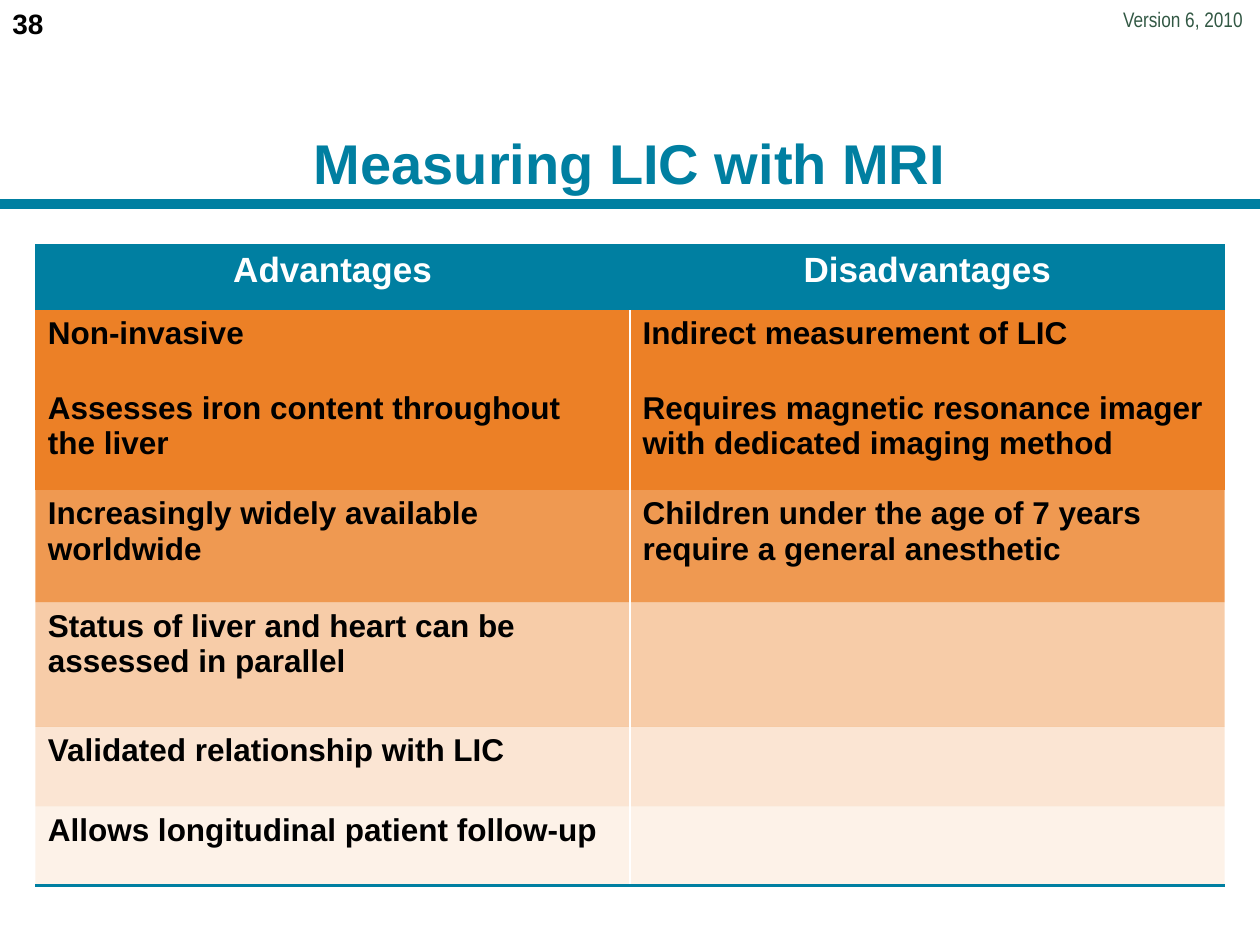
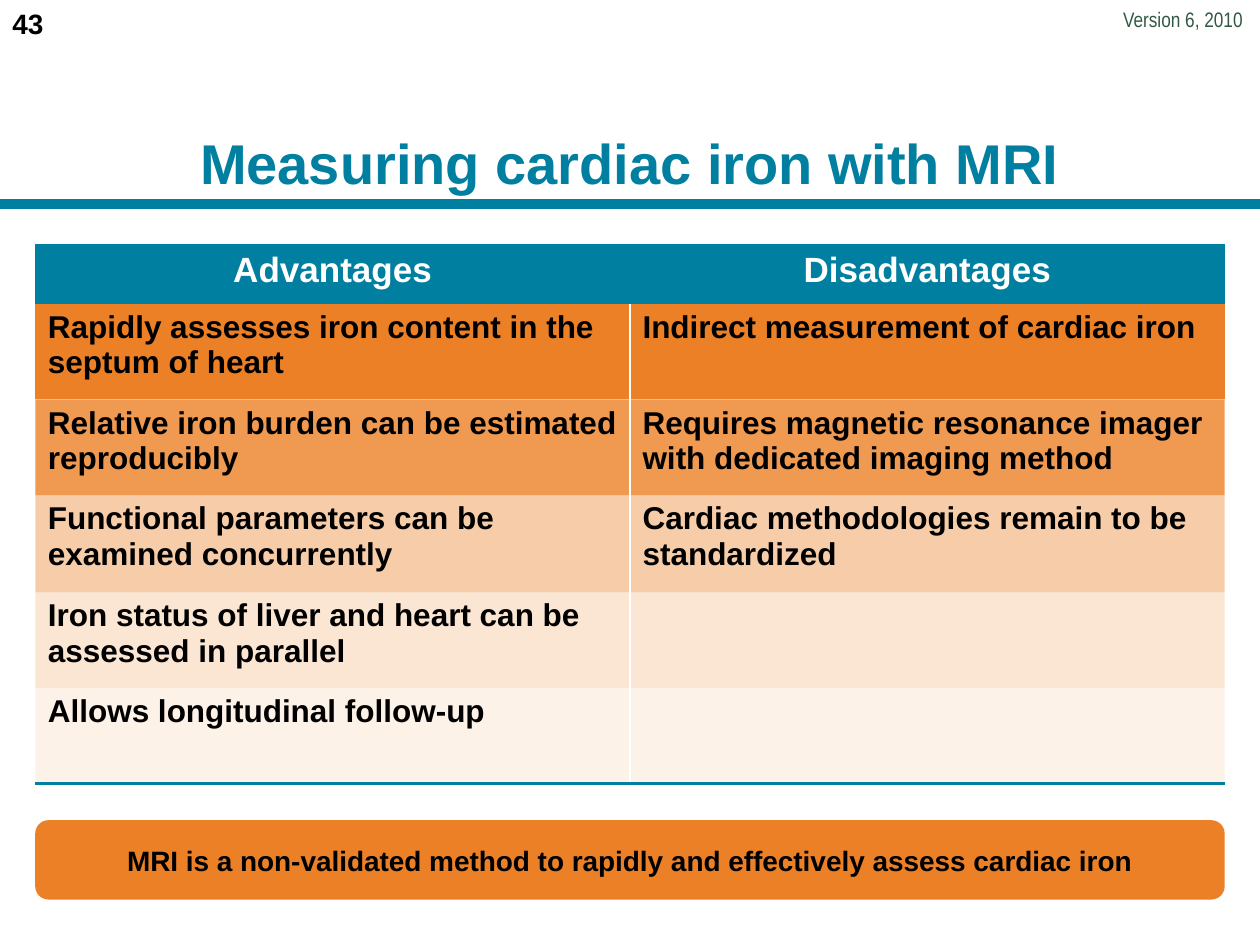
from lxml.etree import SubElement
from pptx import Presentation
from pptx.dml.color import RGBColor
from pptx.enum.shapes import MSO_CONNECTOR as CONNECTOR, MSO_SHAPE as SHAPE
from pptx.enum.text import MSO_ANCHOR as ANCHOR, PP_ALIGN as ALIGN
from pptx.oxml.ns import qn
from pptx.util import Inches, Pt

TEAL, ORANGE, GREEN = "007FA1", "EC8026", "325844"
BLACK, WHITE = "000000", "FFFFFF"
PLAIN_TABLE = "{2D5ABB26-0587-4C30-8999-92F81FD0307C}"
MARGIN, CONTENT_WIDTH = 0.28, 9.44
HEADINGS = ("Advantages", "Disadvantages")

LIC_ROWS = [
    (0.59, 100, "Non-invasive", "Indirect measurement of LIC"),
    (0.84, 100, "Assesses iron content throughout \vthe liver",
     "Requires magnetic resonance imager with dedicated imaging method"),
    (0.89, 80, "Increasingly widely available worldwide",
     "Children under the age of 7 years require a general anesthetic"),
    (0.99, 40, "Status of liver and heart can be assessed in parallel", ""),
    (0.63, 20, "Validated relationship with LIC", ""),
    (0.63, 10, "Allows longitudinal patient follow-up", ""),
]
CARDIAC_ROWS = [
    (0.76, 100, "Rapidly assesses iron content in the septum of heart",
     "Indirect measurement of cardiac iron"),
    (0.76, 80, "Relative iron burden can be estimated reproducibly",
     "Requires magnetic resonance imager with dedicated imaging method"),
    (0.77, 40, "Functional parameters can be examined concurrently",
     "Cardiac methodologies remain to be standardized"),
    (0.76, 20, "Iron status of liver and heart can be assessed in parallel", ""),
    (0.76, 10, "Allows longitudinal follow-up", ""),
]


def paint(color_format, hex_color):
    color_format.rgb = RGBColor.from_string(hex_color)


def write(frame, text, size, color, align=ALIGN.LEFT, font="Arial", bold=True):
    paragraph = frame.paragraphs[0]
    paragraph.text = text
    paragraph.alignment = align
    paragraph.font.name = font
    paragraph.font.size = Pt(size)
    paragraph.font.bold = bold
    paint(paragraph.font.color, color)


def add_text(slide, box, text, size, color, wrap=True, **style):
    frame = slide.shapes.add_textbox(*map(Inches, box)).text_frame
    frame.word_wrap = wrap
    write(frame, text, size, color, **style)
    return frame


def add_rule(slide):
    rule = slide.shapes.add_connector(
        CONNECTOR.STRAIGHT, 0, Inches(1.62), Inches(10), Inches(1.62))
    paint(rule.line.color, TEAL)
    rule.line.width = Pt(6)
    SubElement(rule._element.spPr, qn("a:effectLst"))


def add_frame(slide, number, title):
    add_text(slide, (8.8, 0, 1.2, 0.3), "Version 6, 2010 ", 12, GREEN, wrap=False,
             align=ALIGN.RIGHT, font="Arial Narrow", bold=False)
    add_text(slide, (0, 0, 2.33, 0.52), number, 16, BLACK)
    add_rule(slide)
    heading = add_text(slide, (0.5, 0.3, 9, 1.25), title, 32, TEAL, align=ALIGN.CENTER)
    heading.vertical_anchor = ANCHOR.BOTTOM
    heading.margin_left = heading.margin_right = 0
    heading.margin_top = heading.margin_bottom = 0


def add_border(cell, side, color, width):
    border = SubElement(cell._tc.get_or_add_tcPr(), qn(f"a:{side}"), w=str(Pt(width)))
    fill = SubElement(border, qn("a:solidFill"))
    SubElement(fill, qn("a:srgbClr"), val=color)


def fill_cell(cell, color, opacity=100):
    cell.fill.solid()
    paint(cell.fill.fore_color, color)
    if opacity < 100:
        tint = cell._tc.tcPr.find(f".//{qn('a:solidFill')}[last()]")
        tint = cell._tc.tcPr.find(qn("a:solidFill")).find(qn("a:srgbClr"))
        SubElement(tint, qn("a:alpha"), val=str(opacity * 1000))


def add_comparison(slide, header_height, rows):
    heights = [header_height] + [row[0] for row in rows]
    table = slide.shapes.add_table(
        len(heights), len(HEADINGS), Inches(MARGIN), Inches(1.94),
        Inches(CONTENT_WIDTH), Inches(sum(heights))).table
    table.first_row = table.horz_banding = False
    table._tbl.tblPr.find(qn("a:tableStyleId")).text = PLAIN_TABLE
    for row, height in zip(table.rows, heights):
        row.height = Inches(height)
    for column, heading in enumerate(HEADINGS):
        cell = table.cell(0, column)
        write(cell.text_frame, heading, 20, WHITE, ALIGN.CENTER)
        fill_cell(cell, TEAL)
    for index, (_, opacity, *points) in enumerate(rows, 1):
        for column, point in enumerate(points):
            cell = table.cell(index, column)
            write(cell.text_frame, point, 18, BLACK)
            add_border(cell, "lnL" if column else "lnR", WHITE, 1)
            if index == len(rows):
                add_border(cell, "lnB", TEAL, 2.25)
            fill_cell(cell, ORANGE, opacity)


def add_conclusion(slide, text):
    banner = slide.shapes.add_shape(
        SHAPE.ROUNDED_RECTANGLE, Inches(MARGIN), Inches(6.51),
        Inches(CONTENT_WIDTH), Inches(0.63))
    banner.shadow.inherit = False
    banner.fill.solid()
    paint(banner.fill.fore_color, ORANGE)
    banner.line.fill.background()
    banner.text_frame.word_wrap = False
    banner.text_frame.vertical_anchor = ANCHOR.MIDDLE
    write(banner.text_frame, text, 16, BLACK, ALIGN.CENTER)


def main():
    deck = Presentation()
    deck.slide_width, deck.slide_height = Inches(10), Inches(7.5)
    blank = deck.slide_layouts[6]

    lic = deck.slides.add_slide(blank)
    add_frame(lic, "38", "Measuring LIC with MRI")
    add_comparison(lic, 0.52, LIC_ROWS)

    cardiac = deck.slides.add_slide(blank)
    add_frame(cardiac, "43", "Measuring cardiac iron with MRI")
    add_comparison(cardiac, 0.47, CARDIAC_ROWS)
    add_conclusion(
        cardiac,
        "MRI is a non-validated method to rapidly and effectively assess cardiac iron")

    deck.save("out.pptx")


if __name__ == "__main__":
    main()
